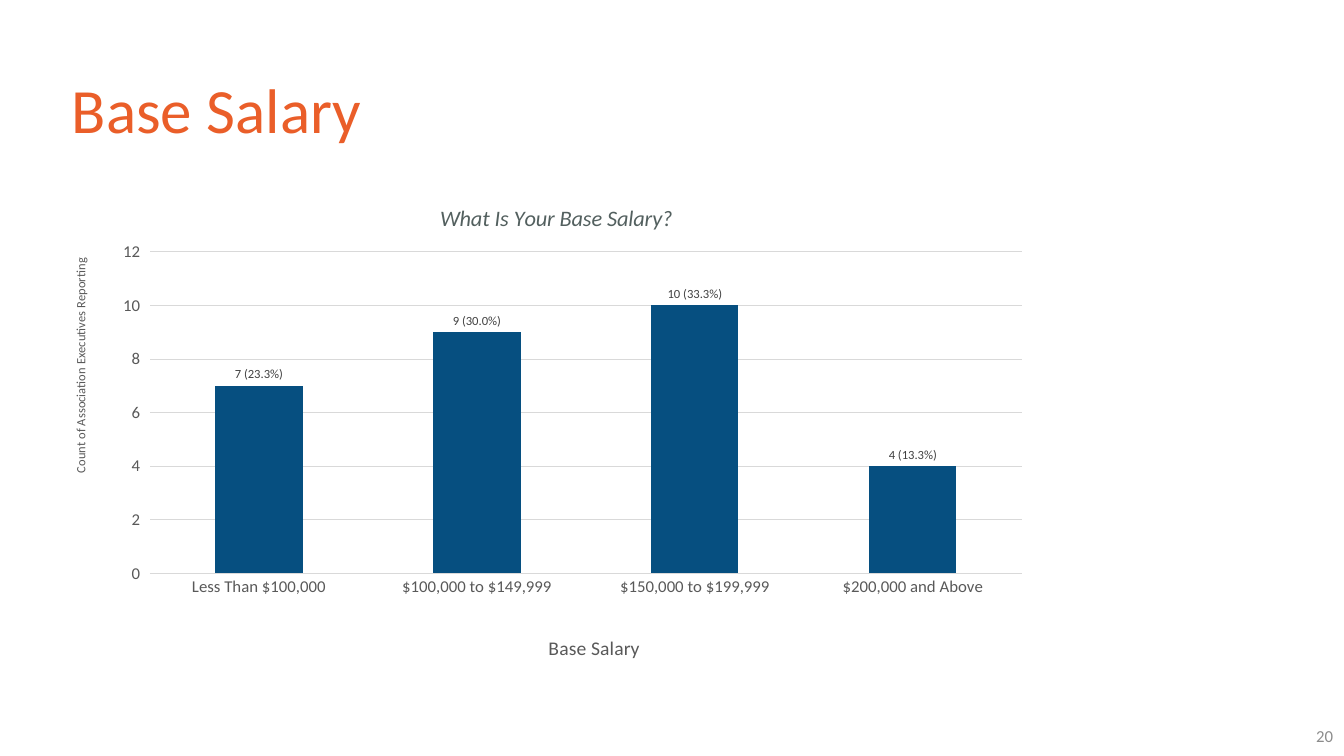
from dataclasses import dataclass

from lxml import etree
from pptx import Presentation
from pptx import util as u
from pptx.chart import data as cd
from pptx.dml.color import RGBColor
from pptx.enum import chart as ch
from pptx.enum import text
from pptx.oxml import ns

HEADING = "Base Salary"
PAGE = "20"
CHART_TITLE = "What Is Your Base Salary?"
X_TITLE = "Base Salary"
Y_TITLE = "Count of Association Executives Reporting"
SALARIES = [
    ("Less Than $100,000", 7, "7 (23.3%)"),
    ("$100,000 to $149,999", 9, "9 (30.0%)"),
    ("$150,000 to $199,999", 10, "10 (33.3%)"),
    ("$200,000 and Above", 4, "4 (13.3%)"),
]

SLIDE = (1344, 756)
HEADING_BOX = (62, 40, 1220, 146)
PAGE_BOX = (1041, 716, 302, 40)
CHART_BOX = (64, 177, 978, 490)
PLOT_BOX = (150, 253, 872, 326)
CHART_TITLE_AT = (436, 200)
X_TITLE_AT = (545, 638)
Y_TITLE_AT = (70, 260)


@dataclass(frozen=True)
class Theme:
    font: str = "Calibri"
    heading: str = "EA5E29"
    page: str = "8C8C8C"
    chart_title: str = "53605F"
    axis: str = "595959"
    label: str = "404040"
    grid: str = "D9D9D9"
    bar: str = "064F80"
    heading_size: int = 45
    chart_title_size: int = 16
    x_title_size: int = 14
    tick_size: int = 12
    label_size: int = 9


T = Theme()


def px(n):
    return u.Emu(round(n * 914400 / 100.8))


def style(font, size, color, italic=False):
    font.name = T.font
    font.size = u.Pt(size)
    font.bold = False
    font.italic = italic
    font.color.rgb = RGBColor.from_string(color)


def write(tf, words, *, size, color, italic=False, align=None, spacing=None):
    p = tf.paragraphs[0]
    p.alignment = align
    p.line_spacing = spacing
    r = p.add_run()
    r.text = words
    style(r.font, size, color, italic)


def add_text(s, box, words, **fmt):
    tf = s.shapes.add_textbox(*map(px, box)).text_frame
    tf.word_wrap = True
    tf.vertical_anchor = text.MSO_ANCHOR.MIDDLE
    write(tf, words, **fmt)


def place(parent, index, left, top, width=None, height=None):
    for old in parent.findall(ns.qn("c:layout")):
        parent.remove(old)
    layout = etree.Element(ns.qn("c:layout"))
    manual = etree.SubElement(layout, ns.qn("c:manualLayout"))
    x0, y0, w0, h0 = CHART_BOX
    values = [("xMode", "edge"), ("yMode", "edge"),
              ("x", round((left - x0) / w0, 4)), ("y", round((top - y0) / h0, 4))]
    if width:
        values.insert(0, ("layoutTarget", "inner"))
        values += [("w", round(width / w0, 4)), ("h", round(height / h0, 4))]
    for tag, value in values:
        etree.SubElement(manual, ns.qn("c:" + tag)).set("val", str(value))
    parent.insert(index, layout)


def add_title(title, words, at, **fmt):
    write(title.text_frame, words, **fmt)
    place(title._element, 1, *at)


def grid_line(line):
    line.color.rgb = RGBColor.from_string(T.grid)
    line.width = u.Pt(0.75)


def add_salary_chart(s):
    data = cd.CategoryChartData()
    data.categories = [name for name, _, _ in SALARIES]
    data.add_series("Series 1", [count for _, count, _ in SALARIES])
    chart = s.shapes.add_chart(
        ch.XL_CHART_TYPE.COLUMN_CLUSTERED, *map(px, CHART_BOX), data).chart
    chart.has_legend = False
    style(chart.font, T.tick_size, T.axis)
    chart.has_title = True
    add_title(chart.chart_title, CHART_TITLE, CHART_TITLE_AT,
              size=T.chart_title_size, color=T.chart_title, italic=True)

    x, y = chart.category_axis, chart.value_axis
    for axis, words, at, size in ((x, X_TITLE, X_TITLE_AT, T.x_title_size),
                                  (y, Y_TITLE, Y_TITLE_AT, T.label_size)):
        axis.has_title = True
        add_title(axis.axis_title, words, at, size=size, color=T.axis)
        style(axis.tick_labels.font, T.tick_size, T.axis)
    x.major_tick_mark = ch.XL_TICK_MARK.NONE
    grid_line(x.format.line)
    y.minimum_scale, y.maximum_scale, y.major_unit = 0, 12, 2
    y.major_tick_mark = ch.XL_TICK_MARK.OUTSIDE
    y.format.line.fill.background()
    grid_line(y.major_gridlines.format.line)

    plot = chart.plots[0]
    plot.gap_width = 150
    plot.vary_by_categories = False
    series = plot.series[0]
    series.format.fill.solid()
    series.format.fill.fore_color.rgb = RGBColor.from_string(T.bar)
    labels = series.data_labels
    labels.show_value = True
    labels.position = ch.XL_LABEL_POSITION.OUTSIDE_END
    style(labels.font, T.label_size, T.label)
    for i, (_, _, words) in enumerate(SALARIES):
        label = series.points[i].data_label
        write(label.text_frame, words, size=T.label_size, color=T.label)
        label.position = ch.XL_LABEL_POSITION.OUTSIDE_END
    place(chart._chartSpace.chart.plotArea, 0, *PLOT_BOX)


def main():
    prs = Presentation()
    prs.slide_width, prs.slide_height = map(px, SLIDE)
    s = prs.slides.add_slide(prs.slide_layouts[6])
    add_text(s, HEADING_BOX, HEADING, size=T.heading_size, color=T.heading, spacing=0.9)
    add_text(s, PAGE_BOX, PAGE, size=T.tick_size, color=T.page,
             align=text.PP_ALIGN.RIGHT)
    add_salary_chart(s)
    prs.save("out.pptx")


if __name__ == "__main__":
    main()
